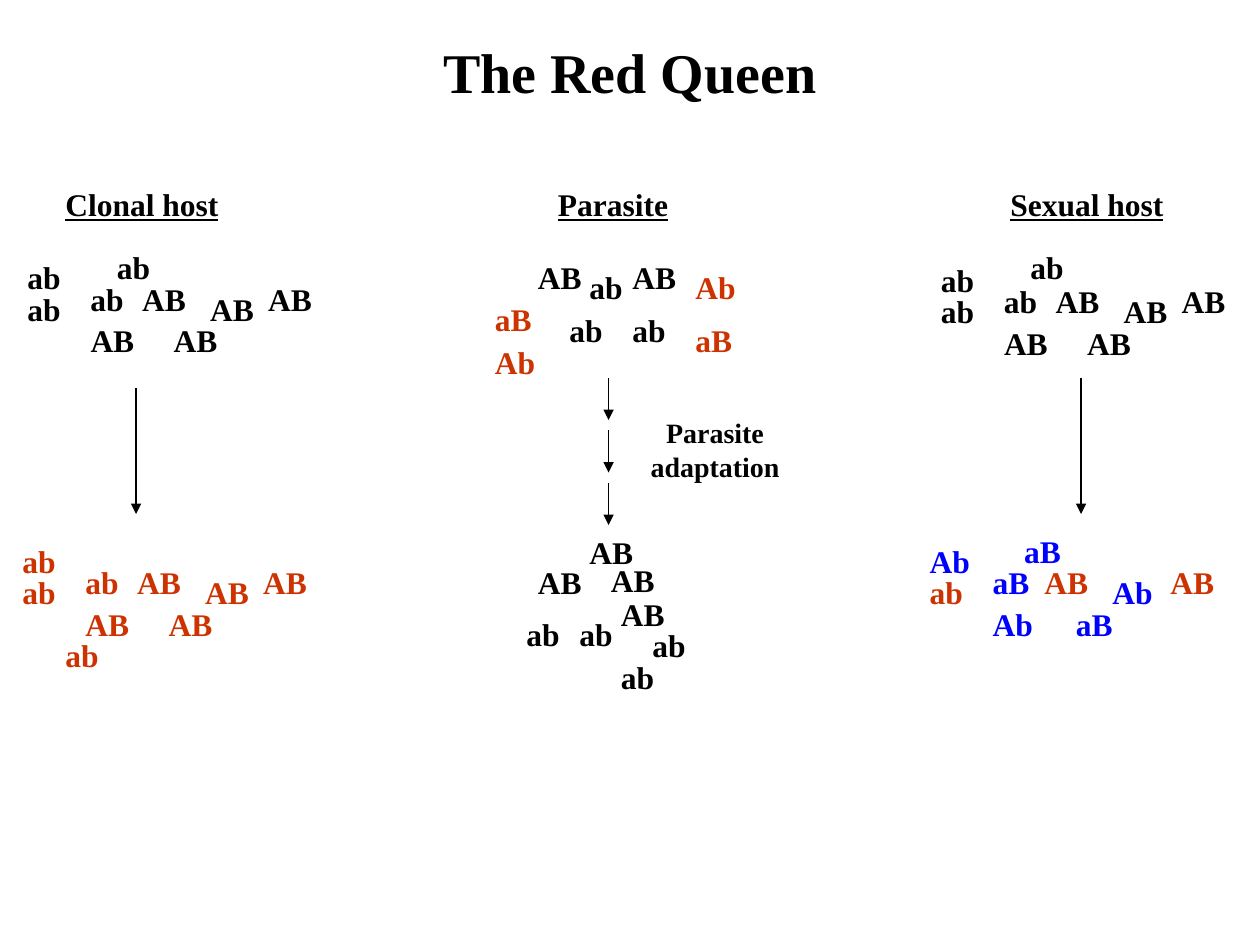
from dataclasses import dataclass

from lxml.etree import SubElement
from pptx import Presentation
from pptx.dml.color import RGBColor
from pptx.enum.shapes import MSO_CONNECTOR
from pptx.enum.text import MSO_AUTO_SIZE, PP_ALIGN
from pptx.oxml.ns import qn
from pptx.util import Inches, Pt


@dataclass(frozen=True)
class Theme:
    font: str = "Times New Roman"
    black: RGBColor = RGBColor(0x00, 0x00, 0x00)
    red: RGBColor = RGBColor(0xCC, 0x33, 0x00)
    blue: RGBColor = RGBColor(0x00, 0x00, 0xFF)
    title: Pt = Pt(32)
    body: Pt = Pt(18)
    note: Pt = Pt(16)
    line: Pt = Pt(0.75)


THEME = Theme()
LINE_H = 0.4
GENOTYPE_W = {"ab": 0.47, "aB": 0.49, "Ab": 0.52, "AB": 0.55}

# Places of the host genotypes, relative to the first one
HOST_SPOTS = [(0, 0), (0, 0.25), (0.5, 0.17), (0.91, 0.17), (1.45, 0.25),
              (1.91, 0.17), (0.5, 0.5), (1.16, 0.5)]
HOST_START = ["ab", "ab", "ab", "AB", "AB", "AB", "AB", "AB"]
SEXUAL_END = ["Ab", "ab", "aB", "AB", "Ab", "AB", "Ab", "aB"]

HEADINGS = [("Clonal host", 0.42, 1.42), ("Parasite", 4.33, 1.08),
            ("Sexual host", 7.92, 1.42)]

PARASITES_START = [("AB", 4.17, 2), ("ab", 4.58, 2.08), ("AB", 4.92, 2),
                   ("ab", 4.42, 2.42), ("ab", 4.92, 2.42)]
PARASITES_RARE = [("Ab", 5.42, 2.08), ("aB", 3.83, 2.33),
                  ("aB", 5.42, 2.5), ("Ab", 3.83, 2.67)]
PARASITES_END = [("AB", 4.58, 4.18), ("AB", 4.17, 4.42), ("AB", 4.75, 4.4),
                 ("AB", 4.83, 4.67), ("ab", 4.08, 4.83), ("ab", 4.5, 4.83),
                 ("ab", 5.08, 4.92), ("ab", 4.83, 5.17)]


def add_text(slide, text, x, y, w, h=LINE_H, size=THEME.body,
             color=THEME.black, underline=None, centred=False):
    """Add bold text; centred text wraps, other text stays on one line."""
    sp = slide.shapes.add_textbox(Inches(x), Inches(y), Inches(w), Inches(h))
    tf = sp.text_frame
    tf.word_wrap = centred
    tf.auto_size = MSO_AUTO_SIZE.SHAPE_TO_FIT_TEXT
    p = tf.paragraphs[0]
    if centred:
        p.alignment = PP_ALIGN.CENTER
    r = p.add_run()
    r.text = text
    fmt = {"name": THEME.font, "size": size, "bold": True, "underline": underline}
    for key, value in fmt.items():
        setattr(r.font, key, value)
    r.font.color.rgb = color


def add_genotypes(slide, items, color=THEME.black):
    for name, x, y in items:
        add_text(slide, name, x, y, GENOTYPE_W[name], color=color)


def add_host(slide, x, y, names, color_of):
    """Add a host population, each genotype coloured by color_of(name)."""
    for name, (dx, dy) in zip(names, HOST_SPOTS):
        add_genotypes(slide, [(name, x + dx, y + dy)], color_of(name))


def add_down_arrow(slide, x, top, bottom):
    line = slide.shapes.add_connector(
        MSO_CONNECTOR.STRAIGHT, Inches(x), Inches(top), Inches(x), Inches(bottom))
    line.line.color.rgb = THEME.black
    line.line.width = THEME.line
    SubElement(line.line._get_or_add_ln(), qn("a:tailEnd"), type="triangle")
    SubElement(line._element.spPr, qn("a:effectLst"))


def always(color):
    return lambda name: color


def recombinant_color(name):
    return THEME.blue if name in ("Ab", "aB") else THEME.red


def main():
    prs = Presentation()
    prs.slide_width, prs.slide_height = Inches(10), Inches(7.5)
    slide = prs.slides.add_slide(prs.slide_layouts[6])

    add_text(slide, "The Red Queen", 0, 0.25, 10, 0.63, THEME.title, centred=True)
    for text, x, w in HEADINGS:
        add_text(slide, text, x, 1.42, w, underline=True)

    add_host(slide, 0.12, 2, HOST_START, always(THEME.black))
    add_host(slide, 7.37, 2.02, HOST_START, always(THEME.black))
    add_genotypes(slide, [("ab", 0.83, 1.92), ("ab", 8.08, 1.92)])
    add_host(slide, 0.08, 4.25, HOST_START, always(THEME.red))
    add_genotypes(slide, [("ab", 0.42, 5)], THEME.red)
    add_host(slide, 7.28, 4.25, SEXUAL_END, recombinant_color)
    add_genotypes(slide, [("aB", 8.03, 4.17)], THEME.blue)

    add_genotypes(slide, PARASITES_START)
    add_genotypes(slide, PARASITES_RARE, THEME.red)
    add_genotypes(slide, PARASITES_END)

    add_down_arrow(slide, 1.08, 3.08, 4.08)
    add_down_arrow(slide, 8.58, 3, 4.08)
    for step in range(3):
        top = 3 + step * 5 / 12
        add_down_arrow(slide, 4.83, top, top + 1 / 3)
    add_text(slide, "Parasite adaptation", 4.75, 3.25, 1.85, 0.64, THEME.note,
             centred=True)

    prs.save("out.pptx")


if __name__ == "__main__":
    main()
